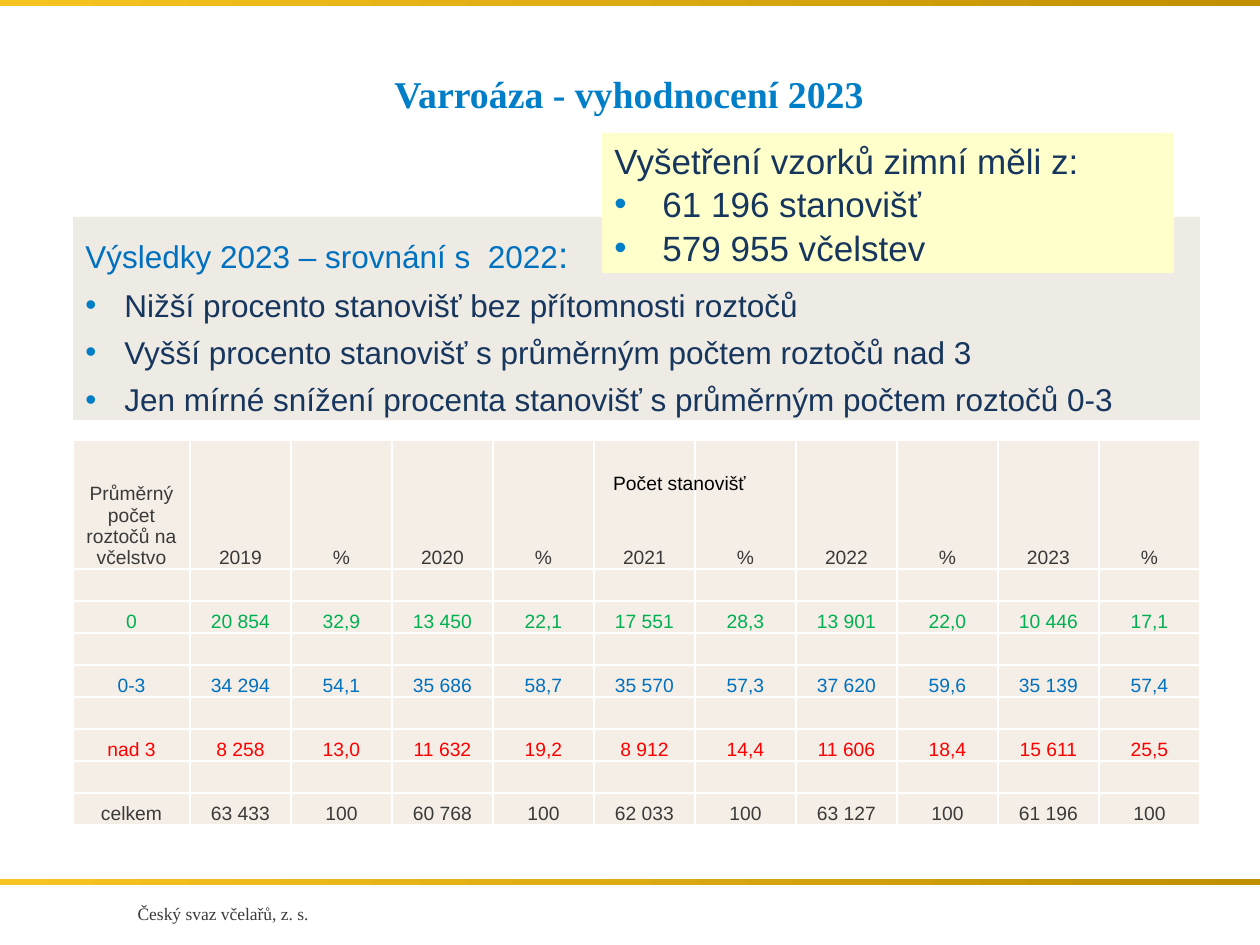
from pptx import Presentation
from pptx.dml.color import RGBColor as RGB
from pptx.enum.shapes import MSO_SHAPE as SHAPE
from pptx.enum.text import MSO_ANCHOR as ANCHOR, PP_ALIGN as ALIGN
from pptx.oxml.ns import qn
from pptx.util import Emu, Pt
from lxml.etree import SubElement

PX_PER_INCH = 126
COLORS = {
    "white": "FFFFFF", "gold": "F7C41F", "dark_gold": "C19003",
    "title": "007EC7", "blue": "0070C0", "navy": "17365D",
    "gray": "3A3A3A", "green": "00B050", "red": "FF0000", "black": "000000",
    "panel": "EEEAE4", "note": "FFFFCC", "cell": "F4EEE6",
}
YEARS = [2019, 2020, 2021, 2022, 2023]
HEADER = ["Průměrný počet roztočů na včelstvo"] + [
    label for year in YEARS for label in (str(year), "%")]
RESULTS = [
    ("green", ["0", "20 854", "32,9", "13 450", "22,1", "17 551", "28,3",
               "13 901", "22,0", "10 446", "17,1"]),
    ("blue", ["0-3", "34 294", "54,1", "35 686", "58,7", "35 570", "57,3",
              "37 620", "59,6", "35 139", "57,4"]),
    ("red", ["nad 3", "8 258", "13,0", "11 632", "19,2", "8 912", "14,4",
             "11 606", "18,4", "15 611", "25,5"]),
    ("gray", ["celkem", "63 433", "100", "60 768", "100", "62 033", "100",
              "63 127", "100", "61 196", "100"]),
]


def px(n):
    return Emu(round(n * 914400 / PX_PER_INCH))


def color(name):
    return RGB.from_string(COLORS[name])


def set_attrs(obj, **values):
    for name, value in values.items():
        setattr(obj, name, value)


def add_run(p, text, size, color_name, font="Arial", bold=False):
    r = p.add_run()
    r.text = text
    set_attrs(r.font, size=Pt(size), name=font, bold=bold)
    r.font.color.rgb = color(color_name)


def add_rect(slide, box, fill=None):
    s = slide.shapes.add_shape(SHAPE.RECTANGLE, *map(px, box))
    s.shadow.inherit = False
    s.line.fill.background()
    if fill:
        s.fill.solid()
        s.fill.fore_color.rgb = color(fill)
    set_attrs(s.text_frame, word_wrap=True, vertical_anchor=ANCHOR.TOP)
    return s


def add_gold_bar(slide, top):
    s = add_rect(slide, (0, top, 1260, 6))
    s.fill.gradient()
    s.fill.gradient_angle = 0
    for stop, name in zip(s.fill.gradient_stops, ("gold", "dark_gold")):
        stop.color.rgb = color(name)


def add_label(slide, box, text, size, color_name, **style):
    s = slide.shapes.add_textbox(*map(px, box))
    s.text_frame.word_wrap = True
    p = s.text_frame.paragraphs[0]
    p.alignment = ALIGN.CENTER
    add_run(p, text, size, color_name, **style)
    return s.text_frame


def add_bullet(p, indent):
    pPr = p._p.get_or_add_pPr()
    pPr.set("marL", str(px(indent)))
    pPr.set("indent", str(-px(indent)))
    clr = SubElement(pPr, qn("a:buClr"))
    SubElement(clr, qn("a:srgbClr"), val=COLORS["title"])
    SubElement(pPr, qn("a:buFont"), typeface="Arial")
    SubElement(pPr, qn("a:buChar"), char="•")


def add_bullet_panel(slide, box, fill, heading, bullets, size, indent,
                     spacing, gap):
    """Filled box: heading made of (text, size, colour) runs, then bullets."""
    tf = add_rect(slide, box, fill).text_frame
    p = tf.paragraphs[0]
    set_attrs(p, alignment=ALIGN.JUSTIFY, line_spacing=spacing)
    for run in heading:
        add_run(p, *run)
    for text in bullets:
        p = tf.add_paragraph()
        set_attrs(p, alignment=ALIGN.JUSTIFY, line_spacing=spacing,
                  space_before=Pt(gap))
        add_bullet(p, indent)
        add_run(p, text, size, "navy")


def add_borders(cell):
    tcPr = cell._tc.get_or_add_tcPr()
    for i, side in enumerate(("lnL", "lnR", "lnT", "lnB")):
        ln = tcPr.makeelement(qn(f"a:{side}"), {"w": str(Pt(1))})
        fill = SubElement(ln, qn("a:solidFill"))
        SubElement(fill, qn("a:srgbClr"), val=COLORS["white"])
        tcPr.insert(i, ln)


def fill_cell(cell, text, color_name):
    set_attrs(cell, vertical_anchor=ANCHOR.BOTTOM, margin_left=px(1),
              margin_right=px(1), margin_top=px(1), margin_bottom=0)
    cell.fill.solid()
    cell.fill.fore_color.rgb = color("cell")
    add_borders(cell)
    p = cell.text_frame.paragraphs[0]
    p.alignment = ALIGN.CENTER
    if text:
        add_run(p, text, 11, color_name)
    else:
        SubElement(p._p, qn("a:endParaRPr"), sz="1100")


def add_results_table(slide):
    # A spacer row precedes every row of results
    rows = [("gray", HEADER)]
    for result in RESULTS:
        rows += [("gray", [""] * len(HEADER)), result]
    widths = [117] + [101] * (len(HEADER) - 1)
    heights = [129] + [32] * (len(rows) - 1)
    table = slide.shapes.add_table(
        len(rows), len(HEADER), px(73), px(440),
        px(sum(widths)), px(sum(heights))).table
    set_attrs(table, first_row=False, horz_banding=False)
    for col, width in zip(table.columns, widths):
        col.width = px(width)
    for row, height, (color_name, texts) in zip(table.rows, heights, rows):
        row.height = px(height)
        for cell, text in zip(row.cells, texts):
            fill_cell(cell, text, color_name)


def main():
    prs = Presentation()
    set_attrs(prs, slide_width=px(1260), slide_height=px(945))
    slide = prs.slides.add_slide(prs.slide_layouts[6])

    # Frame and footer
    for top in (879, 0):
        add_gold_bar(slide, top)
    add_label(slide, (68, 897, 310, 34), "Český svaz včelařů, z. s.", 10,
              "gray", font="Times New Roman")

    # Title, raised within its box
    tf = add_label(slide, (287, 94, 684, 72), "Varroáza - vyhodnocení 2023",
                   21.6, "title", font="Times New Roman", bold=True)
    set_attrs(tf, vertical_anchor=ANCHOR.BOTTOM, margin_top=0,
              margin_bottom=px(55))

    # Comparison panel and sample note
    add_bullet_panel(
        slide, (73, 217, 1127, 203), "panel",
        [("Výsledky 2023 – srovnání s  2022", 18, "blue"), (":", 21, "blue")],
        ["Nižší procento stanovišť bez přítomnosti roztočů",
         "Vyšší procento stanovišť s průměrným počtem roztočů nad 3",
         "Jen mírné snížení procenta stanovišť s průměrným počtem roztočů 0-3"],
        size=18, indent=39, spacing=1.2, gap=1.2)
    add_bullet_panel(
        slide, (602, 133, 572, 140), "note",
        [("Vyšetření vzorků zimní měli z:", 20, "navy")],
        ["61 196 stanovišť", "579 955 včelstev"],
        size=20, indent=48, spacing=1, gap=1)

    # Results
    add_results_table(slide)
    add_label(slide, (287, 465, 785, 36), "Počet stanovišť", 11, "black")

    prs.save("out.pptx")


if __name__ == "__main__":
    main()
